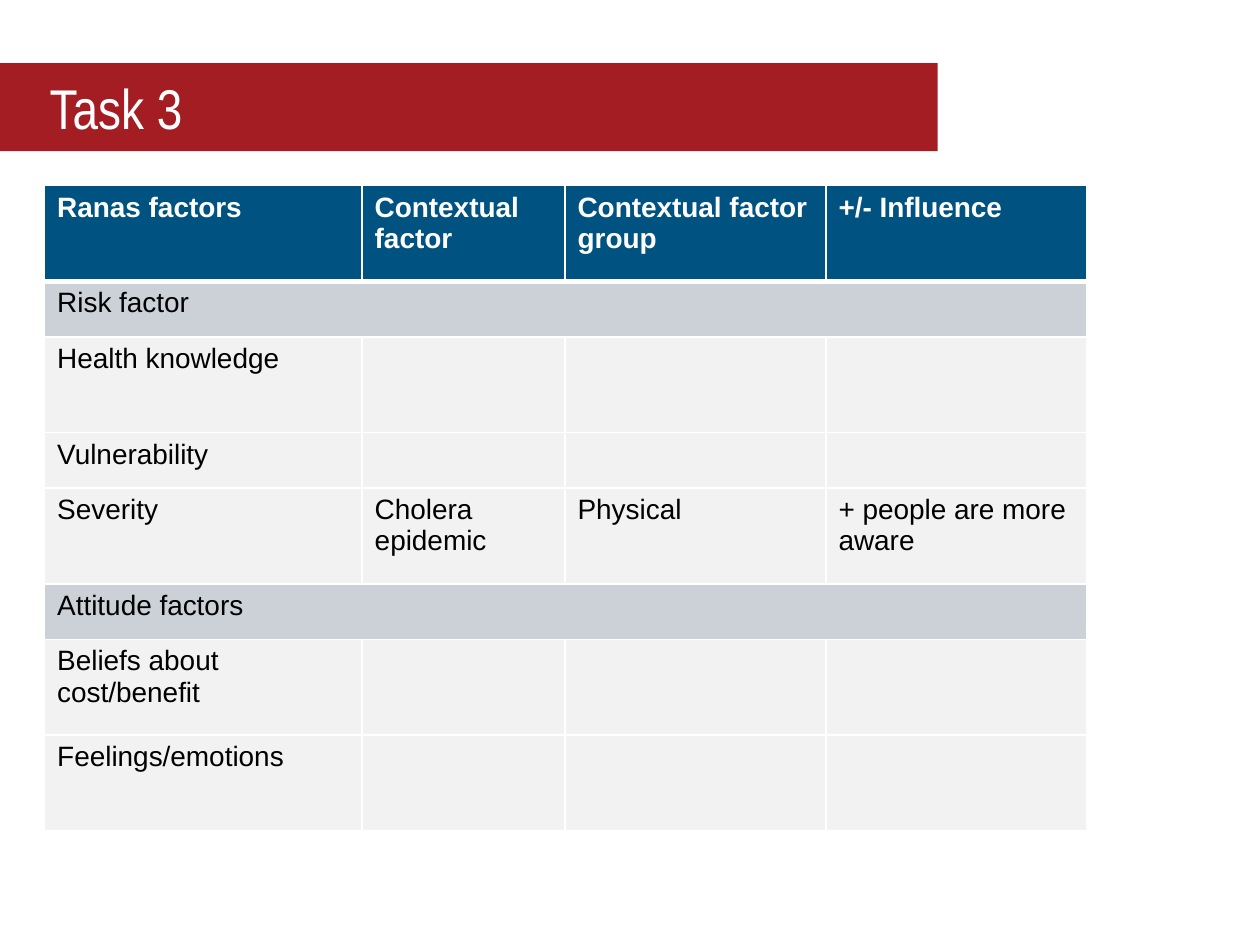
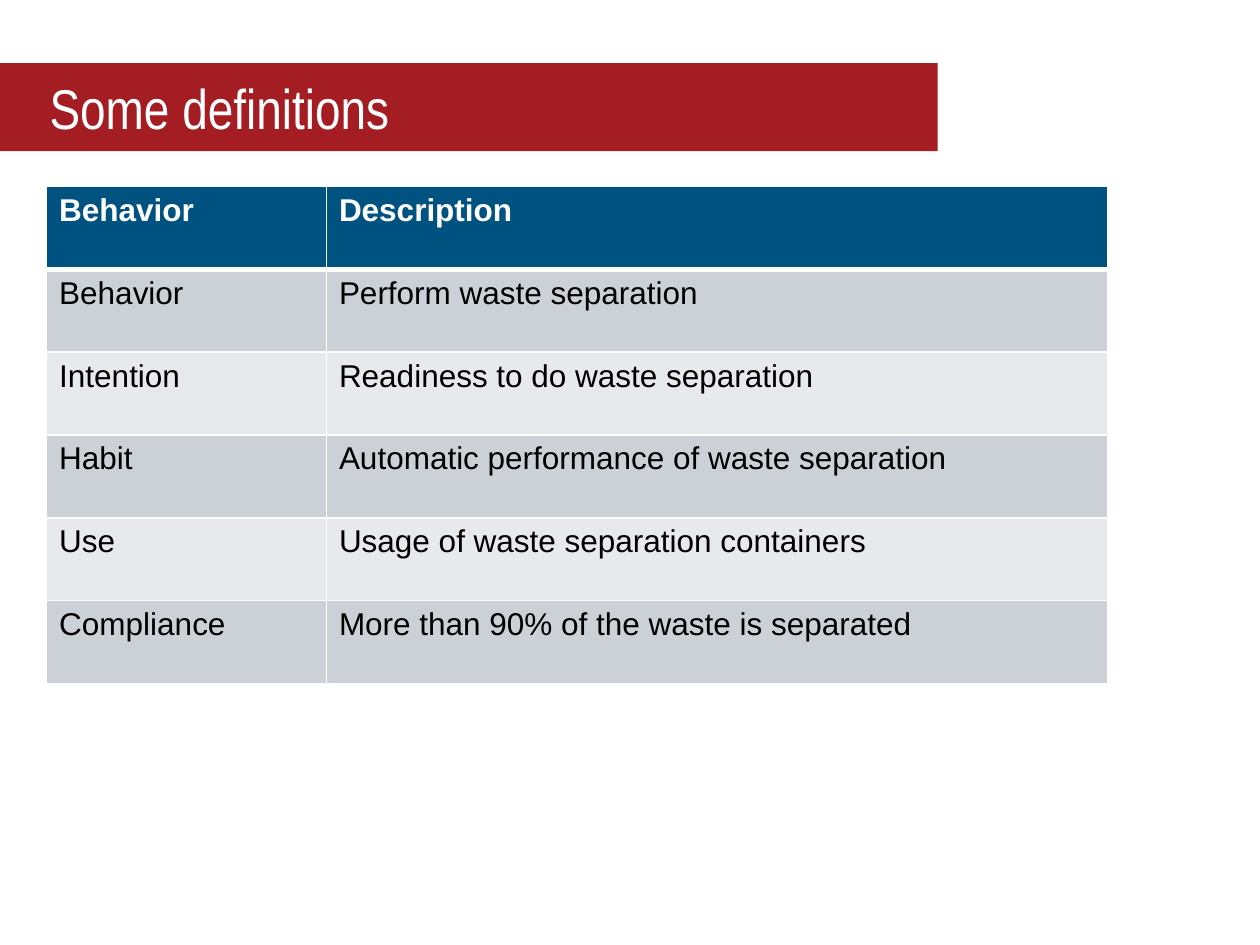
from pptx import Presentation
from pptx import util as u
from pptx.dml.color import RGBColor
from pptx.enum import text
from pptx.oxml.ns import qn
from lxml import etree

WHITE = RGBColor(0xFF, 0xFF, 0xFF)
BLACK = RGBColor(0x00, 0x00, 0x00)
RED = RGBColor(0xA3, 0x1D, 0x23)
BLUE = RGBColor(0x00, 0x53, 0x80)
BLUE_GREY = RGBColor(0xCC, 0xD1, 0xD8)
PALE_BLUE = RGBColor(0xE7, 0xE9, 0xED)
PALE_GREY = RGBColor(0xF2, 0xF2, 0xF2)

RANAS_FACTORS = [
    ["Ranas factors", "Contextual factor", "Contextual factor group", "+/- Influence"],
    ["Risk factor"],
    ["Health knowledge", "", "", ""],
    ["Vulnerability", "", "", ""],
    ["Severity", "Cholera epidemic", "Physical", "+ people are more aware"],
    ["Attitude factors"],
    ["Beliefs about cost/benefit", "", "", ""],
    ["Feelings/emotions", "", "", ""],
]
DEFINITIONS = [
    ["Behavior", "Description"],
    ["Behavior", "Perform waste separation"],
    ["Intention", "Readiness to do waste separation"],
    ["Habit", "Automatic performance of waste separation"],
    ["Use", "Usage of waste separation containers"],
    ["Compliance", "More than 90% of the waste is separated"],
]


class Deck:
    title_font = "Arial Narrow"
    body_font = "Arial"
    thin_rule, header_rule = u.Pt(1), u.Pt(3)

    def __init__(self):
        self.presentation = Presentation()
        self.presentation.slide_width = u.Cm(25.4)
        self.presentation.slide_height = u.Cm(19.05)
        self.slide = None

    def add_slide(self, title):
        layout = self.presentation.slide_layouts.get_by_name("Title Only")
        self.slide = self.presentation.slides.add_slide(layout)
        self.title_band(title)

    def title_band(self, title):
        shape = self.slide.shapes.title
        shape.left, shape.top = u.Cm(0), u.Cm(1.27)
        shape.width, shape.height = u.Cm(18.9), u.Cm(1.78)
        shape.fill.solid()
        shape.fill.fore_color.rgb = RED
        frame = shape.text_frame
        frame.auto_size = text.MSO_AUTO_SIZE.NONE
        frame.vertical_anchor = text.MSO_ANCHOR.MIDDLE
        frame.margin_left = frame.margin_right = u.Cm(1)
        frame.paragraphs[0].alignment = text.PP_ALIGN.LEFT
        self.run(frame.paragraphs[0], title, self.title_font, 32, WHITE)

    def run(self, paragraph, words, font_name, size, color, bold=False):
        run = paragraph.add_run()
        run.text = words
        run.font.name = font_name
        run.font.size = u.Pt(size)
        run.font.bold = bold
        run.font.color.rgb = color

    def cell_borders(self, cell, row):
        """Thin white rules, with a thick one between the header and the body."""
        top = self.header_rule if row == 1 else self.thin_rule
        bottom = self.header_rule if row == 0 else self.thin_rule
        widths = {"L": self.thin_rule, "R": self.thin_rule, "T": top, "B": bottom}
        properties = cell._tc.get_or_add_tcPr()
        for side, width in widths.items():
            line = etree.SubElement(properties, qn(f"a:ln{side}"), w=str(int(width)))
            fill = etree.SubElement(line, qn("a:solidFill"))
            etree.SubElement(fill, qn("a:srgbClr"), val=str(WHITE))

    def table(self, left, top, widths, heights, rows, fills, size):
        """A row with a single entry spans the whole table."""
        frame = self.slide.shapes.add_table(
            len(rows), len(widths), u.Cm(left), u.Cm(top),
            u.Cm(sum(widths)), u.Cm(sum(heights)))
        table = frame.table
        for column, width in zip(table.columns, widths):
            column.width = u.Cm(width)
        for index, (entries, height, fill) in enumerate(zip(rows, heights, fills)):
            table.rows[index].height = u.Cm(height)
            cells = list(table.rows[index].cells)
            for cell in cells:
                self.cell_borders(cell, index)
                cell.fill.solid()
                cell.fill.fore_color.rgb = fill
            if len(entries) == 1:
                cells[0].merge(cells[-1])
            header = index == 0
            for cell, words in zip(cells, entries):
                if words:
                    self.run(cell.text_frame.paragraphs[0], words, self.body_font,
                             size, WHITE if header else BLACK, header)


def add_task(deck):
    deck.add_slide("Task 3")
    tall, short = 1.93, 1.12
    heights = [tall, short, tall, short, tall, short, tall, tall]
    fills = [BLUE] + [BLUE_GREY if len(row) == 1 else PALE_GREY
                      for row in RANAS_FACTORS[1:]]
    deck.table(0.9, 3.74, [6.4, 4.09, 5.26, 5.26], heights, RANAS_FACTORS, fills, 16)


def add_definitions(deck):
    deck.add_slide("Some definitions")
    count = len(DEFINITIONS)
    fills = [BLUE] + [BLUE_GREY if row % 2 else PALE_BLUE for row in range(1, count)]
    deck.table(0.94, 3.76, [5.64, 15.75], [1.67] * count, DEFINITIONS, fills, 18)


def main():
    deck = Deck()
    add_task(deck)
    add_definitions(deck)
    deck.presentation.save("out.pptx")


if __name__ == "__main__":
    main()
